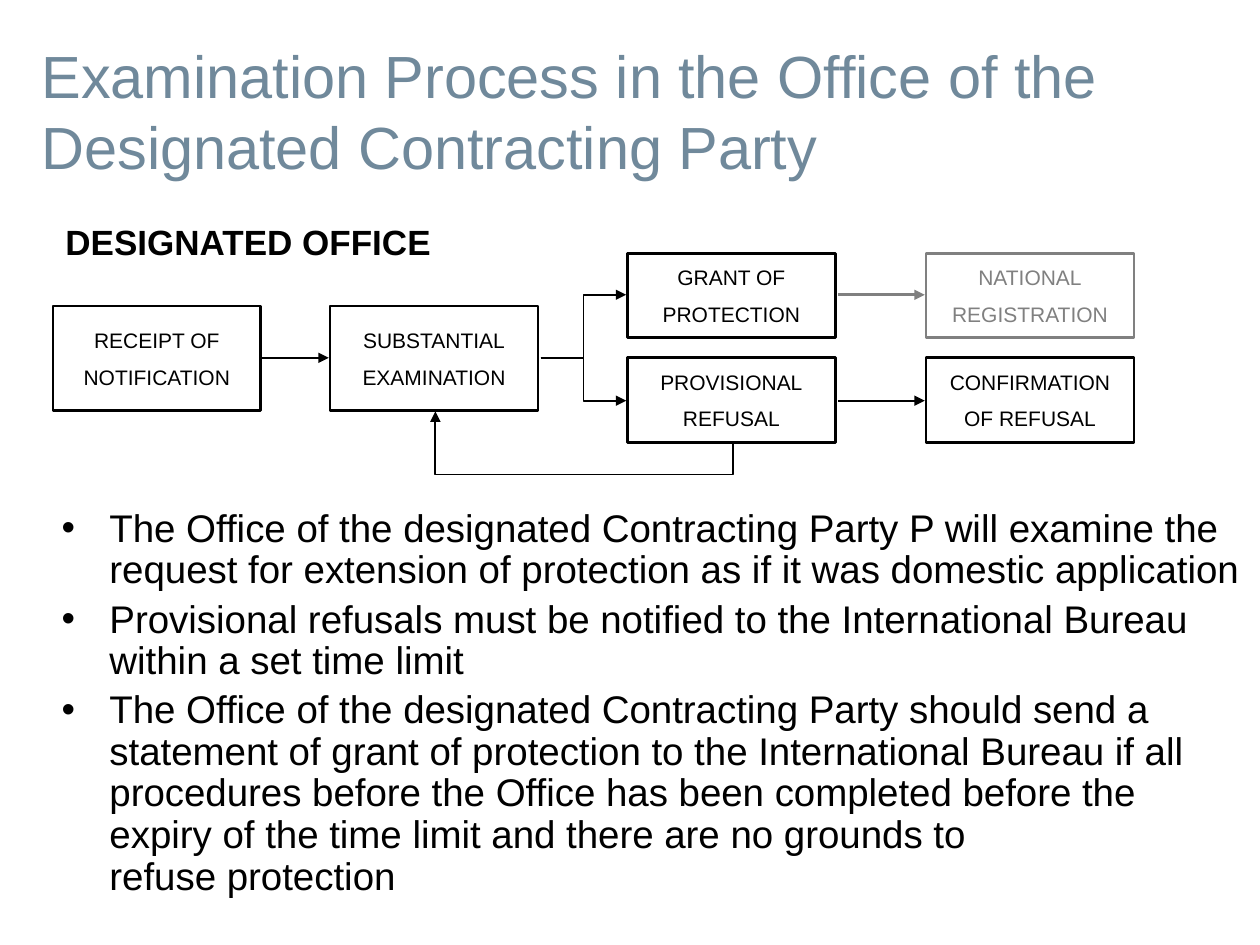
from dataclasses import dataclass

from lxml.etree import SubElement
from pptx import Presentation
from pptx.dml.color import RGBColor
from pptx.enum.shapes import MSO_CONNECTOR as Link, MSO_SHAPE as Preset
from pptx.enum.text import MSO_ANCHOR as Anchor, MSO_AUTO_SIZE as AutoSize, PP_ALIGN as Align
from pptx.oxml.ns import qn
from pptx.util import Emu, Pt

EMU_PER_PX = 9144


@dataclass(frozen=True)
class Theme:
    font: str = "Arial"
    title_color: str = "70899B"
    ink: str = "000000"
    muted: str = "808080"
    title_size: int = 34
    body_size: int = 22
    heading_size: int = 20
    box_size: int = 12


THEME = Theme()
TITLE = "Examination Process in the Office of the Designated Contracting Party"
POINTS = [
    "The Office of the designated Contracting Party P will examine the request "
    "for extension of protection as if it was domestic application",
    "Provisional refusals must be notified to the International Bureau within a set time limit",
    "The Office of the designated Contracting Party should send a statement of grant of "
    "protection to the International Bureau if all procedures before the Office has been "
    "completed before the expiry of the time limit and there are no grounds to\nrefuse protection",
]
BOX_WIDTH = 165
TALL, SHORT = 83, 67
STEPS = [
    (42, 243, TALL, ["RECEIPT OF", "NOTIFICATION"], THEME.ink),
    (262, 243, TALL, ["SUBSTANTIAL", "EXAMINATION"], THEME.ink),
    (498, 201, SHORT, ["GRANT OF", "PROTECTION"], THEME.ink),
    (498, 284, SHORT, ["PROVISIONAL", "REFUSAL"], THEME.ink),
    (735, 284, SHORT, ["CONFIRMATION", "OF REFUSAL"], THEME.ink),
    (735, 201, SHORT, ["NATIONAL", "REGISTRATION"], THEME.muted),
]
ARROWS = [
    (Link.STRAIGHT, (208, 284), (261, 284), THEME.ink, 1),
    (Link.ELBOW, (429, 284), (497, 234), THEME.ink, 1),
    (Link.ELBOW, (429, 284), (497, 318), THEME.ink, 1),
    (Link.STRAIGHT, (665, 318), (734, 318), THEME.ink, 1),
    (Link.STRAIGHT, (665, 234), (734, 234), THEME.muted, 1.5),
]


def px(*values):
    return [Emu(value * EMU_PER_PX) for value in values]


def add_text(para, text, size, color, bold=False):
    for index, piece in enumerate(text.split("\n")):
        if index:
            para.add_line_break()
        span = para.add_run()
        span.text = piece
        font = span.font
        font.name, font.size, font.bold = THEME.font, Pt(size), bold
        font.color.rgb = RGBColor.from_string(color)


def next_para(frame, index):
    return frame.add_paragraph() if index else frame.paragraphs[0]


def add_title(page):
    title = page.shapes.title
    title.left, title.top, title.width, title.height = px(23, 25, 961, 125)
    frame = title.text_frame
    frame.word_wrap = True
    frame.auto_size = AutoSize.NONE
    frame.vertical_anchor = Anchor.MIDDLE
    para = frame.paragraphs[0]
    para.alignment = Align.LEFT
    add_text(para, TITLE, THEME.title_size, THEME.title_color)


def add_heading(page):
    frame = page.shapes.add_textbox(*px(42, 170, 312, 43)).text_frame
    frame.word_wrap = False
    add_text(frame.paragraphs[0], "DESIGNATED OFFICE", THEME.heading_size, THEME.ink, True)


def add_bullets(page):
    frame = page.shapes.add_textbox(*px(39, 399, 961, 315)).text_frame
    frame.word_wrap = True
    for index, text in enumerate(POINTS):
        para = next_para(frame, index)
        properties = para._p.get_or_add_pPr()
        indent = px(38)[0]
        properties.set("marL", str(indent))
        properties.set("indent", str(-indent))
        SubElement(properties, qn("a:buFont"), typeface=THEME.font)
        SubElement(properties, qn("a:buChar"), char="•")
        para.line_spacing = 0.9
        if index:
            para.space_before = Pt(4.4)
        add_text(para, text, THEME.body_size, THEME.ink)


def add_step(page, left, top, height, lines, color):
    box = page.shapes.add_shape(Preset.RECTANGLE, *px(left, top, BOX_WIDTH, height))
    box.shadow.inherit = False
    box.fill.background()
    box.line.color.rgb = RGBColor.from_string(color)
    box.line.width = Pt(1.5)
    frame = box.text_frame
    frame.word_wrap = False
    frame.vertical_anchor = Anchor.MIDDLE
    for index, text in enumerate(lines):
        para = next_para(frame, index)
        para.alignment = Align.CENTER
        if index:
            para.space_before = Pt(6.5)
        add_text(para, text, THEME.box_size, color)


def add_arrow(page, kind, start, end, color, width):
    arrow = page.shapes.add_connector(kind, *px(*start, *end))
    arrow.line.color.rgb = RGBColor.from_string(color)
    arrow.line.width = Pt(width)
    SubElement(arrow.line._get_or_add_ln(), qn("a:tailEnd"), type="triangle")
    SubElement(arrow._element.spPr, qn("a:effectLst"))
    return arrow


def add_return_arrow(page):
    arrow = add_arrow(page, Link.ELBOW, (451, 457), (476, 221), THEME.ink, 1)
    arrow._element.spPr.find(qn("a:xfrm")).set("rot", str(270 * 60000))
    geometry = arrow._element.spPr.find(qn("a:prstGeom"))
    adjustments = geometry.find(qn("a:avLst"))
    SubElement(adjustments, qn("a:gd"), name="adj1", fmla="val -100700")


def main():
    deck = Presentation()
    deck.slide_width, deck.slide_height = px(1000, 750)
    page = deck.slides.add_slide(deck.slide_layouts[5])
    add_title(page)
    add_bullets(page)
    for step in STEPS:
        add_step(page, *step)
    for arrow in ARROWS:
        add_arrow(page, *arrow)
    add_return_arrow(page)
    add_heading(page)
    deck.save("out.pptx")


if __name__ == "__main__":
    main()
